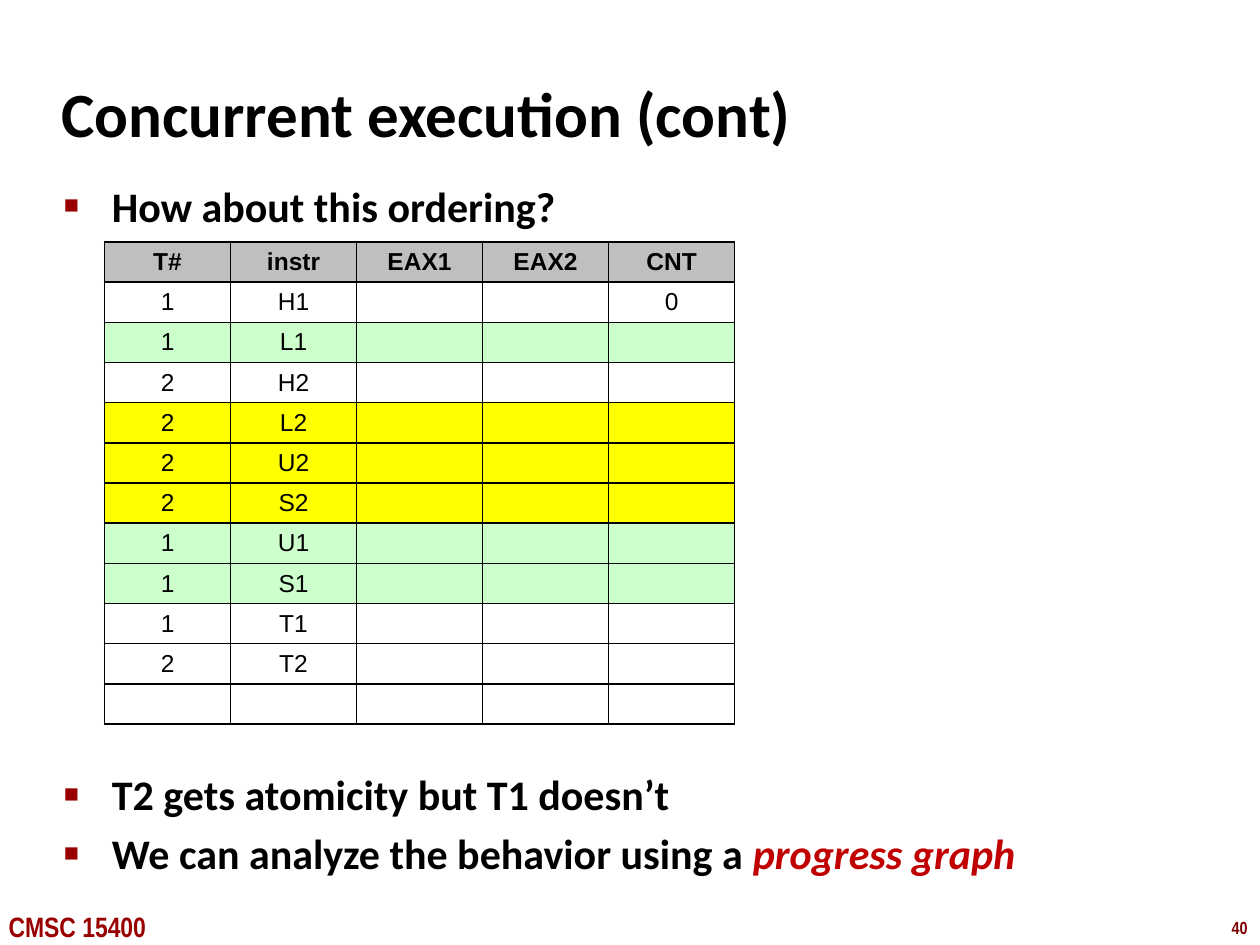
from lxml import etree
from pptx import Presentation
from pptx.dml.color import RGBColor
from pptx.enum.text import MSO_ANCHOR, PP_ALIGN
from pptx.oxml.ns import qn
from pptx.util import Inches, Pt

MIDDLE, TOP = MSO_ANCHOR.MIDDLE, MSO_ANCHOR.TOP
LEFT, CENTER = PP_ALIGN.LEFT, PP_ALIGN.CENTER
RIGHT = PP_ALIGN.RIGHT
BLACK, DARK_RED = "000000", "990000"
HEADER_FILL, PLAIN_FILL = "BFBFBF", "FFFFFF"
THREAD_FILLS = {"1": "CCFFCC", "2": "FFFF00"}
CRITICAL_STEPS = "LUS"
HEADINGS = ["T#", "instr", "EAX1", "EAX2", "CNT"]
STEPS = ["H1", "L1", "H2", "L2", "U2", "S2", "U1", "S1", "T1", "T2"]
INITIAL_COUNT = "0"


def rgb(value):
    """Turn a hex string into a colour."""
    return RGBColor.from_string(value)


def add_text(paragraph, text, size=24, font="Calibri", color=BLACK, bold=True,
             italic=False, align=LEFT):
    """Append a formatted run to a paragraph."""
    paragraph.alignment = align
    run = paragraph.add_run()
    run.text = text
    run.font.size = Pt(size)
    run.font.name = font
    run.font.bold = bold
    run.font.italic = italic
    run.font.color.rgb = rgb(color)


def add_frame(slide, box, anchor=TOP, wrap=True):
    """Add a text box and return its text frame."""
    frame = slide.shapes.add_textbox(*map(Inches, box)).text_frame
    frame.word_wrap = wrap
    frame.vertical_anchor = anchor
    return frame


def set_bullet(paragraph):
    """Give a paragraph a hanging square bullet."""
    properties = paragraph._p.get_or_add_pPr()
    properties.set("marL", str(Inches(0.38)))
    properties.set("indent", str(-Inches(0.38)))
    color = etree.SubElement(properties, qn("a:buClr"))
    etree.SubElement(color, qn("a:srgbClr"), val=DARK_RED)
    etree.SubElement(properties, qn("a:buSzPct"), val="60000")
    etree.SubElement(properties, qn("a:buFont"), typeface="Arial")
    etree.SubElement(properties, qn("a:buChar"), char="■")


def add_title(slide, box):
    """Add the slide title."""
    frame = add_frame(slide, box, anchor=MIDDLE)
    add_text(frame.paragraphs[0], "Concurrent execution (cont)", size=36)


def add_bullets(slide, box, items):
    """Add bulleted lines, each given as a list of text and format pairs."""
    frame = add_frame(slide, box)
    for index, parts in enumerate(items):
        paragraph = frame.add_paragraph() if index else frame.paragraphs[0]
        set_bullet(paragraph)
        if index:
            paragraph.space_before = Pt(4.8)
        for text, style in parts:
            add_text(paragraph, text, **style)


def set_borders(cell):
    """Draw thin black lines on all sides of a cell."""
    properties = cell._tc.get_or_add_tcPr()
    for position, side in enumerate(("a:lnL", "a:lnR", "a:lnT", "a:lnB")):
        line = etree.Element(qn(side), w=str(Pt(1)))
        fill = etree.SubElement(line, qn("a:solidFill"))
        etree.SubElement(fill, qn("a:srgbClr"), val=BLACK)
        properties.insert(position, line)


def step_row(step):
    """Return the cell texts and fill for one instruction."""
    thread = step[1]
    count = INITIAL_COUNT if step == STEPS[0] else ""
    fill = THREAD_FILLS[thread] if step[0] in CRITICAL_STEPS else PLAIN_FILL
    return [thread, step, "", "", count], fill


def add_trace_table(slide, box):
    """Add the table of interleaved instructions."""
    rows = [(HEADINGS, HEADER_FILL)]
    rows += [step_row(step) for step in STEPS]
    rows.append(([""] * len(HEADINGS), PLAIN_FILL))
    shape = slide.shapes.add_table(len(rows), len(HEADINGS), *map(Inches, box))
    table = shape.table
    table.first_row = table.horz_banding = False
    for row_index, (texts, fill) in enumerate(rows):
        for column_index, text in enumerate(texts):
            cell = table.cell(row_index, column_index)
            cell.margin_top = cell.margin_bottom = 0
            cell.vertical_anchor = MIDDLE
            cell.fill.solid()
            cell.fill.fore_color.rgb = rgb(fill)
            set_borders(cell)
            if text:
                add_text(cell.text_frame.paragraphs[0], text, size=14,
                         font="Arial", bold=row_index == 0, align=CENTER)


def add_footer(slide, course_box, number_box):
    """Add the course name and the slide number."""
    course = add_frame(slide, course_box, wrap=False)
    add_text(course.paragraphs[0], "CMSC 15400", size=16,
             font="Arial Narrow", color=DARK_RED)
    number = add_frame(slide, number_box, wrap=False)
    add_text(number.paragraphs[0], "40", size=10, font="Arial Narrow",
             color="800000", align=RIGHT)


def main():
    """Build and save the presentation."""
    presentation = Presentation()
    presentation.slide_width = Inches(10)
    presentation.slide_height = Inches(7.5)
    slide = presentation.slides.add_slide(presentation.slide_layouts[6])
    add_footer(slide, (-0.03, 7.17, 1.42, 0.37), (9.66, 7.23, 0.34, 0.27))
    add_title(slide, (0.39, 0.48, 8.3, 0.83))
    add_bullets(slide, (0.41, 1.38, 8.64, 0.51),
                [[("How about this ordering?", {})]])
    add_bullets(slide, (0.41, 6.05, 8.64, 0.98), [
        [("T2 gets atomicity but T1 doesn’t", {})],
        [("We can analyze the behavior using a ", {}),
         ("progress graph", {"color": "C00000", "italic": True})],
    ])
    add_trace_table(slide, (0.83, 1.92, 5, 3.83))
    presentation.save("out.pptx")


if __name__ == "__main__":
    main()
